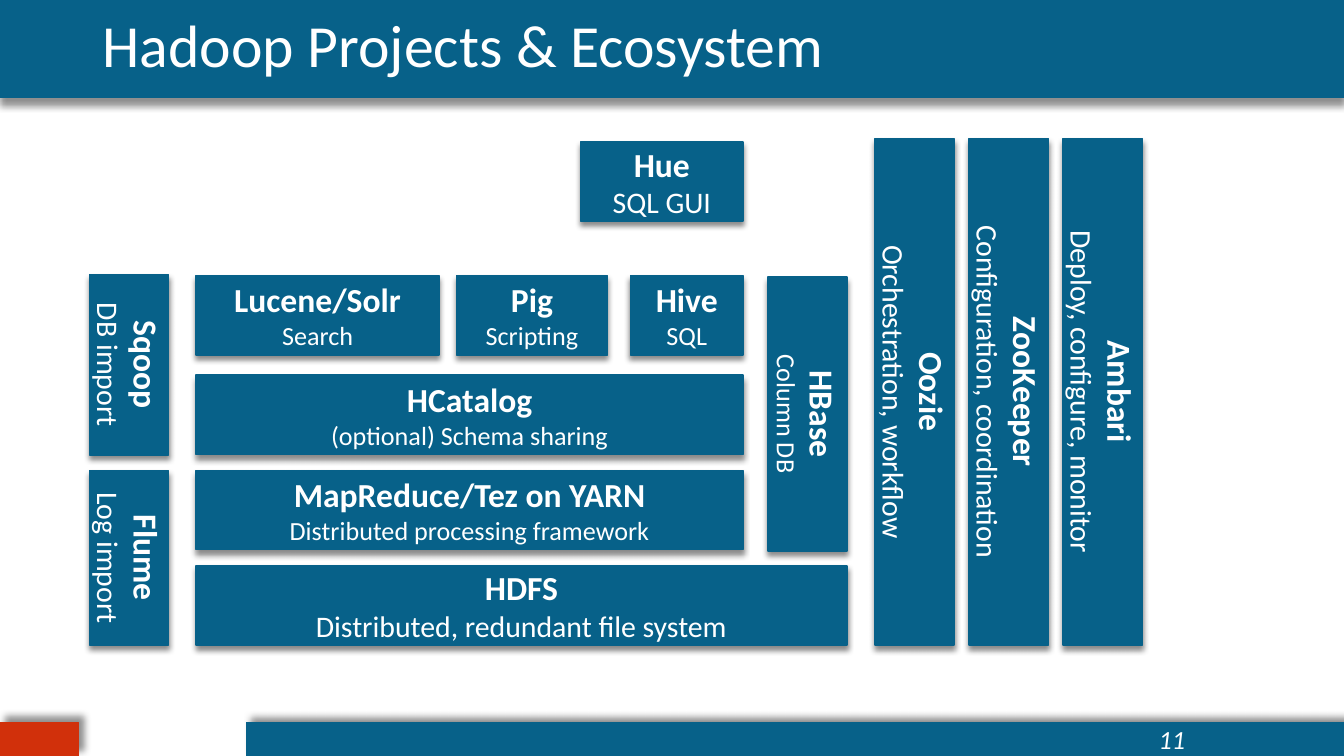
from dataclasses import dataclass

from lxml import etree
from pptx import Presentation
from pptx import util as u
from pptx.dml.color import RGBColor
from pptx.enum import shapes, text
from pptx.oxml import ns

FONT = "Calibri"
BLUE, RED, WHITE = "076189", "D1300B", "FFFFFF"
DEPTH = 42.5  # short side of every block
COLUMN_TOP, COLUMN_LENGTH = 74.2, 271.4
FIRST_COLUMN, COLUMN_STEP = 468.7, 50.4


@dataclass(frozen=True)
class Shadow:
    opacity: int
    blur: float
    distance: float
    angle: int


@dataclass(frozen=True)
class Bar:
    left: float
    top: float
    width: float
    height: float
    color: str
    line: float
    shadow: Shadow


@dataclass(frozen=True)
class Block:
    """A labelled block; left and top are those of its visible outline."""
    name: str
    role: str
    left: float
    top: float
    length: float
    role_size: float = 16
    upright: bool = False


HEADER_SHADOW = Shadow(43, 4, 4, 90)
FOOTER_SHADOW = Shadow(43, 4, 4, 315)
BLOCK_SHADOW = Shadow(45, 3, 2.4, 90)

BARS = [
    Bar(0, 0, 720, 52.5, BLUE, 0, HEADER_SHADOW),
    Bar(0, 387, 42, 18, RED, 0.75, FOOTER_SHADOW),
    Bar(132, 387, 588, 18, BLUE, 0.75, FOOTER_SHADOW),
]

BLOCKS = [
    Block("HDFS", "Distributed, redundant file system", 105, 303.1, 348.7),
    Block("MapReduce/Tez on YARN", "Distributed processing framework",
          105, 252, 293.2, 14),
    Block("HCatalog", "(optional) Schema sharing", 105, 201, 293.2, 14),
    Block("Lucene/Solr", "Search", 105, 147.6, 130.3, 14),
    Block("Pig", "Scripting", 244.6, 147.6, 80.8, 14),
    Block("Hive", "SQL", 337.7, 147.6, 60.5, 14),
    Block("Hue", "SQL GUI", 311, 76, 87.2),
    Block("Sqoop", "DB import", 47.9, 147.2, 96.5, upright=True),
    Block("Flume", "Log import", 47.9, 252.2, 93.5, upright=True),
    Block("HBase", "Column DB", 411.3, 148.4, 146.9, 14, upright=True),
]
COLUMNS = [
    ("Oozie", "Orchestration, workflow"),
    ("ZooKeeper", "Configuration, coordination"),
    ("Ambari", "Deploy, configure, monitor"),
]
BLOCKS += [
    Block(name, role, FIRST_COLUMN + index * COLUMN_STEP, COLUMN_TOP,
          COLUMN_LENGTH, upright=True)
    for index, (name, role) in enumerate(COLUMNS)
]


def rgb(value: str) -> RGBColor:
    return RGBColor.from_string(value)


def add_shadow(shape, shadow: Shadow) -> None:
    shape.shadow.inherit = False
    effects = shape._element.spPr.find(ns.qn("a:effectLst"))
    outer = etree.SubElement(
        effects, ns.qn("a:outerShdw"),
        blurRad=str(u.Pt(shadow.blur)), dist=str(u.Pt(shadow.distance)),
        dir=str(shadow.angle * 60000), algn="ctr", rotWithShape="0")
    color = etree.SubElement(outer, ns.qn("a:srgbClr"), val="000000")
    etree.SubElement(color, ns.qn("a:alpha"), val=str(shadow.opacity * 1000))


def add_bar(page, bar: Bar):
    shape = page.shapes.add_shape(
        shapes.MSO_SHAPE.RECTANGLE, u.Pt(bar.left), u.Pt(bar.top),
        u.Pt(bar.width), u.Pt(bar.height))
    shape.fill.solid()
    shape.fill.fore_color.rgb = rgb(bar.color)
    if bar.line:
        shape.line.color.rgb = rgb(bar.color)
        shape.line.width = u.Pt(bar.line)
    else:
        shape.line.fill.background()
    add_shadow(shape, bar.shadow)
    return shape


def add_span(para, words: str, size: float, bold: bool = False,
             italic: bool = False) -> None:
    span = para.add_run()
    span.text = words
    span.font.name = FONT
    span.font.size = u.Pt(size)
    span.font.bold = bold
    span.font.italic = italic
    span.font.color.rgb = rgb(WHITE)


def add_block(page, block: Block) -> None:
    left, top = block.left, block.top
    if block.upright:
        # A quarter turn keeps the centre, so shift the unturned frame.
        shift = (block.length - DEPTH) / 2
        left, top = left - shift, top + shift
    shape = add_bar(page, Bar(left, top, block.length, DEPTH, BLUE, 0.79,
                              BLOCK_SHADOW))
    shape.rotation = 90 if block.upright else 0
    frame = shape.text_frame
    frame.word_wrap = True
    frame.vertical_anchor = text.MSO_ANCHOR.MIDDLE
    name, role = frame.paragraphs[0], frame.add_paragraph()
    name.alignment = role.alignment = text.PP_ALIGN.CENTER
    add_span(name, block.name, 18, bold=True)
    add_span(role, block.role, block.role_size)


def add_label(page, words: str, left: float, top: float, width: float,
              height: float, size: float, anchor: text.MSO_ANCHOR,
              align: text.PP_ALIGN, italic: bool = False) -> None:
    box = page.shapes.add_textbox(u.Pt(left), u.Pt(top), u.Pt(width),
                                  u.Pt(height))
    frame = box.text_frame
    frame.word_wrap = True
    frame.vertical_anchor = anchor
    para = frame.paragraphs[0]
    para.alignment = align
    add_span(para, words, size, italic=italic)


def main() -> None:
    deck = Presentation()
    deck.slide_width, deck.slide_height = u.Pt(720), u.Pt(405)
    page = deck.slides.add_slide(deck.slide_layouts[6])
    for bar in BARS:
        add_bar(page, bar)
    add_label(page, "Hadoop Projects & Ecosystem", 48, 4.3, 642, 42, 32,
              text.MSO_ANCHOR.BOTTOM, text.PP_ALIGN.LEFT)
    add_label(page, "11", 540, 387, 102, 18, 14,
              text.MSO_ANCHOR.MIDDLE, text.PP_ALIGN.RIGHT, italic=True)
    for block in BLOCKS:
        add_block(page, block)
    deck.save("out.pptx")


if __name__ == "__main__":
    main()
